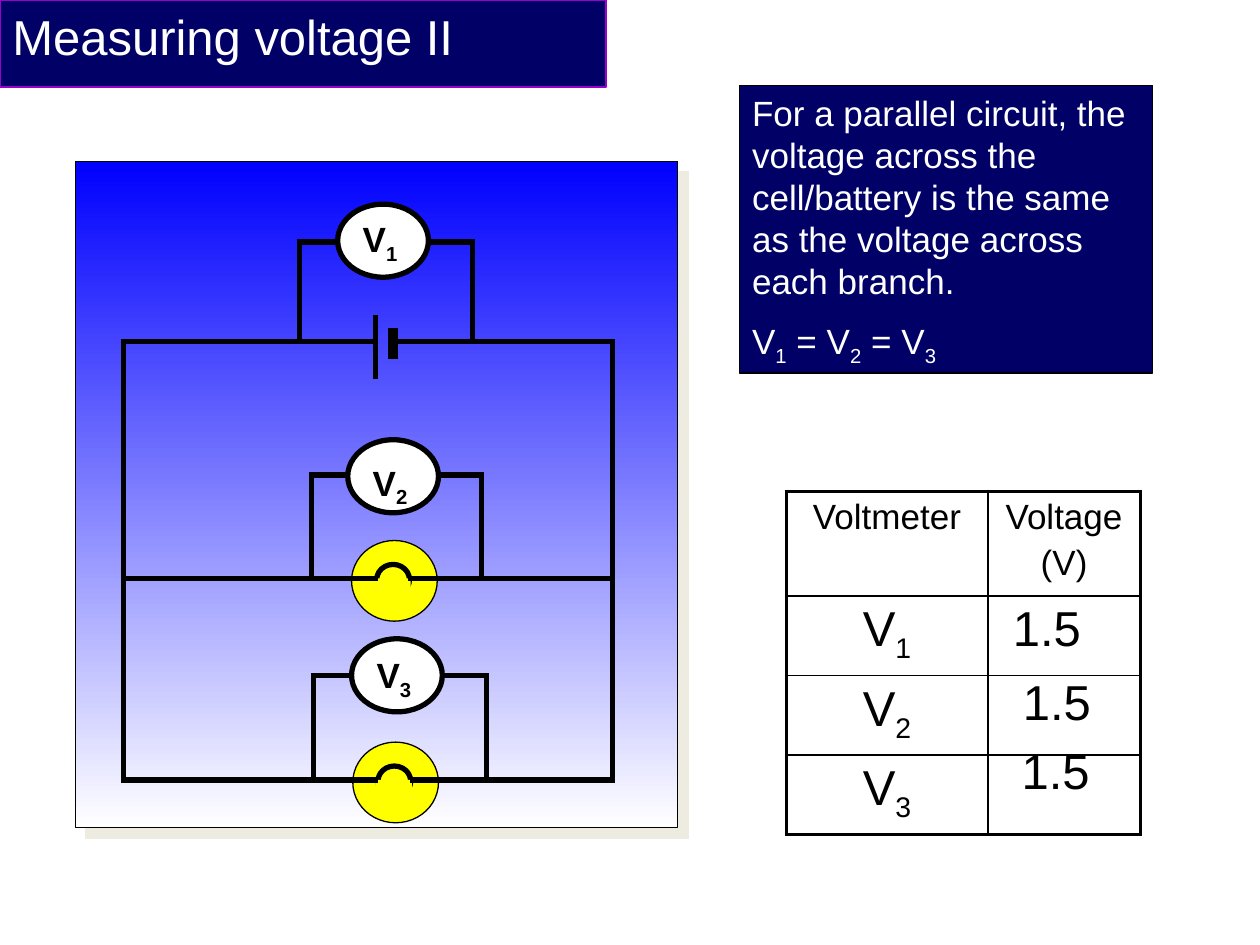
from lxml.etree import SubElement
from pptx import Presentation
from pptx.dml.color import RGBColor
from pptx.enum.shapes import MSO_CONNECTOR as Link, MSO_SHAPE as Geo
from pptx.enum.text import MSO_ANCHOR as Anchor, PP_ALIGN as Align
from pptx.oxml.ns import qn
from pptx.util import Inches, Pt

NAVY, BLACK, WHITE, YELLOW = "000066", "000000", "FFFFFF", "FFFF00"

# Content: in text, "_" makes the next character a subscript
TITLE = "Measuring voltage II"
RULE = ["For a parallel circuit, the voltage across the cell/battery "
        "is the same as the voltage across each branch.",
        "V_1 = V_2 = V_3"]
ROWS = [(["Voltmeter"], ["Voltage", "(V)"]),
        (["V_1"], []), (["V_2"], []), (["V_3"], [])]
COLS, HEIGHTS = [1.6, 1.21], [0.83, 0.63, 0.63, 0.63]
VALUES = [("1.5", 7.94, 4.69), ("1.5", 8.02, 5.28), ("1.5", 8.01, 5.83)]

# Circuit: rails, bulbs (left, top) and voltmeters
LEFT, RIGHT, RAILS = 0.98, 4.86, (2.71, 4.59, 6.19)
CELL = [(2.98, 2.5, 3.01, 3), (3.12, 2.6, 2.85, 6)]  # x, top, bottom, width
BULBS = [(2.79, 4.29), (2.8, 5.89)]
GAPS = [(2.97, 3.12), (3, 3.24), (3, 3.25)]
METERS = [  # label, left, top, label drop, lead left, lead right, lead y
    ("V_1", 2.68, 1.62, 0.06, 2.38, 3.75, 1.92),
    ("V_2", 2.76, 3.49, 0.12, 2.47, 3.82, 3.77),
    ("V_3", 2.79, 5.07, 0.07, 2.49, 3.86, 5.36)]
WIDE, HIGH, CAP = 0.72, 0.58, 0.02  # meter size, corner overlap


def rgb(code):
    return RGBColor.from_string(code)


def write(frame, lines, size, color=BLACK, bold=False, align=Align.LEFT, gap=0):
    for i, line in enumerate(lines):
        para = frame.paragraphs[0] if i == 0 else frame.add_paragraph()
        para.alignment, para.space_before = align, Pt(gap)
        font = para.font
        font.name, font.size, font.bold = "Arial", Pt(size), bold
        font.color.rgb = rgb(color)
        head, *rest = line.split("_")
        para.add_run().text = head
        for part in rest:
            sub = para.add_run()
            sub.text = part[0]
            sub.font._element.set("baseline", "-25000")
            if part[1:]:
                para.add_run().text = part[1:]


def shape(geo, x, y, w, h, fill, line=BLACK, width=0.75):
    item = slide.shapes.add_shape(geo, *map(Inches, (x, y, w, h)))
    item.shadow.inherit = False
    if fill:
        item.fill.solid()
        item.fill.fore_color.rgb = rgb(fill)
    if line:
        item.line.color.rgb = rgb(line)
        item.line.width = Pt(width)
    else:
        item.line.fill.background()
    return item


def panel(x, y, w, h, line, lines, size, gap=0):
    frame = shape(Geo.RECTANGLE, x, y, w, h, NAVY, line).text_frame
    frame.word_wrap, frame.vertical_anchor = True, Anchor.TOP
    write(frame, lines, size, WHITE, gap=gap)


def label(x, y, w, h, text, size, bold=False):
    frame = slide.shapes.add_textbox(*map(Inches, (x, y, w, h))).text_frame
    frame.word_wrap = True
    write(frame, [text], size, bold=bold)


def wire(x1, y1, x2, y2, width=3):
    item = slide.shapes.add_connector(
        Link.STRAIGHT, *map(Inches, (x1, y1, x2, y2)))
    item.line.color.rgb = rgb(BLACK)
    item.line.width = Pt(width)
    SubElement(item._element.spPr, qn("a:effectLst"))


def border(cell, **sides):
    props = cell._tc.get_or_add_tcPr()
    for side in "LRTB":
        edge = SubElement(props, qn("a:ln" + side), w=str(Pt(sides[side])))
        fill = SubElement(edge, qn("a:solidFill"))
        SubElement(fill, qn("a:srgbClr"), val=BLACK)


deck = Presentation()
deck.slide_width, deck.slide_height = Inches(10), Inches(7.5)
slide = deck.slides.add_slide(deck.slide_layouts[6])

panel(0, 0, 4.81, 0.69, "9900CC", [TITLE], 28)

# Gradient board with its shadow
board = shape(Geo.RECTANGLE, 0.6, 1.28, 4.78, 5.29, None)
board.fill.gradient()
board.fill.gradient_angle = 270
for stop, place, color in zip(board.fill.gradient_stops, (0, 1), ("0000FF", WHITE)):
    stop.position, stop.color.rgb = place, rgb(color)
shade = SubElement(board._element.spPr.find(qn("a:effectLst")), qn("a:outerShdw"),
                   dist=str(Pt(8.5)), dir="2700000", algn="ctr", rotWithShape="0")
SubElement(shade, qn("a:srgbClr"), val="EEECE1")

# Bulbs: the patch leaves only the upper half of the filament
for x, y in BULBS:
    shape(Geo.OVAL, x, y, 0.68, 0.64, YELLOW)
    shape(Geo.OVAL, x + 0.2, y + 0.19, 0.26, 0.24, YELLOW, width=3)
    shape(Geo.RECTANGLE, x + 0.18, y + 0.3, 0.29, 0.17, YELLOW, None)

# Cell, side wires and rails
for x, top, low, width in CELL:
    wire(x, top, x, low, width)
for x in (LEFT, RIGHT):
    wire(x, RAILS[0], x, RAILS[-1])
for y, (start, end) in zip(RAILS, GAPS):
    wire(LEFT - CAP, y, start, y)
    wire(end, y, RIGHT + CAP, y)

# Voltmeters with their leads
for (name, x, y, drop, west, east, lead), rail in zip(METERS, RAILS):
    wire(west - CAP, lead, x, lead)
    wire(x + WIDE, lead, east + CAP, lead)
    for side in (west, east):
        wire(side, lead, side, rail)
    shape(Geo.OVAL, x, y, WIDE, HIGH, WHITE, width=3)
    label(x + 0.1, y + drop, 0.61, 0.43, name, 20, True)

# Table of readings
grid = slide.shapes.add_table(len(ROWS), len(COLS), Inches(6.24), Inches(3.9),
                              Inches(sum(COLS)), Inches(sum(HEIGHTS))).table
for col, w in zip(grid.columns, COLS):
    col.width = Inches(w)
for r, (row, h) in enumerate(zip(ROWS, HEIGHTS)):
    grid.rows[r].height = Inches(h)
    size = 28 if r else 20
    for c, lines in enumerate(row):
        cell = grid.cell(r, c)
        border(cell, L=1 if c else 2.25, R=2.25 if c else 1,
               T=1 if r else 2.25, B=2.25 if r == len(ROWS) - 1 else 1)
        cell.fill.solid()
        cell.fill.fore_color.rgb = rgb(WHITE)
        write(cell.text_frame, lines, size, align=Align.CENTER, gap=size / 5)
for text, x, y in VALUES:
    label(x, y, 0.92, 0.57, text, 28)

panel(5.87, 0.68, 3.28, 2.28, BLACK, RULE, 20, 10)

deck.save("out.pptx")
